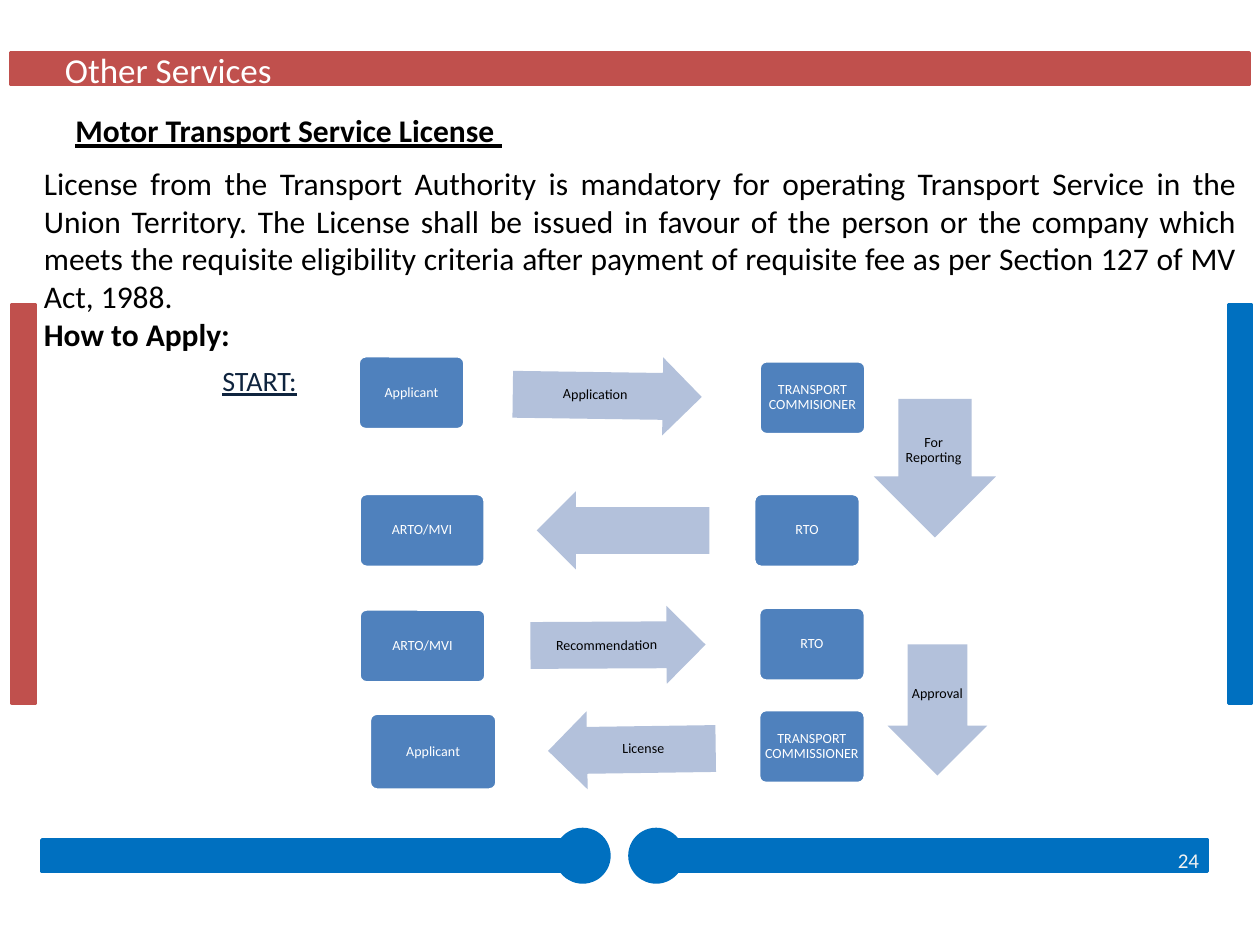
import pptx
import pptx.util
import pptx.dml.color
import pptx.enum.shapes
import pptx.enum.text

Pt = pptx.util.Pt
RGBColor = pptx.dml.color.RGBColor
SHAPE = pptx.enum.shapes.MSO_SHAPE
ALIGN = pptx.enum.text.PP_ALIGN
ANCHOR = pptx.enum.text.MSO_ANCHOR

BLUE = RGBColor(0x00, 0x70, 0xC0)
RED = RGBColor(0xC0, 0x50, 0x4D)
BOX_BLUE = RGBColor(0x4F, 0x81, 0xBD)
ARROW_BLUE = RGBColor(0xB3, 0xC1, 0xDB)
NAVY = RGBColor(0x0F, 0x24, 0x3E)
PALE = RGBColor(0xF2, 0xF2, 0xF2)
WHITE = RGBColor(0xFF, 0xFF, 0xFF)
BLACK = RGBColor(0x00, 0x00, 0x00)

presentation = pptx.Presentation()
presentation.slide_width = Pt(720)
presentation.slide_height = Pt(540)
slide = presentation.slides.add_slide(presentation.slide_layouts[6])


def add_shape(kind, frame, fill, line=None):
    shape = slide.shapes.add_shape(kind, *[Pt(value) for value in frame])
    shape.shadow.inherit = False
    shape.fill.solid()
    shape.fill.fore_color.rgb = fill
    if line is None:
        shape.line.fill.background()
    else:
        shape.line.color.rgb = line
        shape.line.width = Pt(2)
    return shape


def write_text(shape, lines, color, size, align, margin=None, wrap=True):
    """Write one paragraph for each (text, font values) pair."""
    text_frame = shape.text_frame
    text_frame.word_wrap = wrap
    if margin is not None:
        text_frame.vertical_anchor = ANCHOR.MIDDLE
        for side in ("left", "top", "right", "bottom"):
            setattr(text_frame, "margin_" + side, Pt(margin))
    for index, (text, font_values) in enumerate(lines):
        paragraph = text_frame.add_paragraph() if index else text_frame.paragraphs[0]
        paragraph.alignment = align
        if margin is not None:
            paragraph.line_spacing = 0.9
        run = paragraph.add_run()
        run.text = text
        run.font.color.rgb = color
        for name, value in {"name": "Calibri", "size": Pt(size), **font_values}.items():
            setattr(run.font, name, value)


# Frame of bars and circles
for kind, frame, color in [
    (SHAPE.RECTANGLE, (24, 480, 318, 18), BLUE),
    (SHAPE.OVAL, (318, 474, 30, 30), BLUE),
    (SHAPE.RECTANGLE, (702, 174, 13, 228), BLUE),
    (SHAPE.RECTANGLE, (6, 30, 708, 18), RED),
    (SHAPE.RECTANGLE, (7, 174, 13, 228), RED),
    (SHAPE.RECTANGLE, (372, 480, 318, 18), BLUE),
    (SHAPE.OVAL, (360, 474, 30, 30), BLUE),
]:
    add_shape(kind, frame, color, color)

# Offices and people in the application process
for text, frame in [
    ("Applicant", (204.7, 203.3, 61, 42.2)),
    ("TRANSPORT COMMISIONER", (433.8, 206.2, 61, 42.2)),
    ("RTO", (430.7, 282, 61, 42.2)),
    ("ARTO/MVI", (205.2, 282, 72, 42.2)),
    ("ARTO/MVI", (205.2, 348, 72.5, 42.2)),
    ("RTO", (433.5, 347, 61, 42.2)),
    ("TRANSPORT COMMISSIONER", (433.5, 405.5, 61, 42.2)),
    ("Applicant", (211, 407.5, 73, 44)),
]:
    box = add_shape(SHAPE.ROUNDED_RECTANGLE, frame, BOX_BLUE, WHITE)
    box.adjustments[0] = 0.1
    write_text(box, [(text, {})], WHITE, 8, ALIGN.CENTER, margin=2)

# Arrows between the steps, with upright labels
for frame, rotation, label, label_frame, label_rotation in [
    ((293, 203.8, 108, 44.6), 0.8, "Application", (293, 212.4, 94.3, 26.6), 0.8),
    ((494.6, 232.6, 79.2, 69.8), 90, "For Reporting", (512.6, 228.2, 41.8, 58.3), 0),
    ((306.7, 280.8, 98.6, 44.6), 180, None, None, 0),
    ((303.1, 346.3, 100.1, 44.6), 359.7, "Recommendation", (303.1, 355.7, 87.1, 26.6), 359.7),
    ((498.2, 377.3, 74.9, 56.9), 90, "Approval", (518.4, 367.9, 34.6, 57.6), 0),
    ((313.2, 406.1, 95.8, 44.6), 179.2, "License", (326.2, 414.7, 82.8, 26.6), 359.2),
]:
    arrow = add_shape(SHAPE.RIGHT_ARROW, frame, ARROW_BLUE)
    arrow.adjustments[0] = 0.6
    arrow.adjustments[1] = 0.5
    arrow.rotation = rotation
    if label:
        label_box = slide.shapes.add_textbox(*[Pt(value) for value in label_frame])
        label_box.rotation = label_rotation
        write_text(label_box, [(label, {})], BLACK, 8, ALIGN.CENTER, margin=0)

# Headings, body text and page number
body = (
    "License from the Transport Authority is mandatory for operating Transport Service "
    "in the Union Territory. The License shall be issued in favour of the person or the "
    "company which meets the requisite eligibility criteria after payment of requisite "
    "fee as per Section 127 of MV Act, 1988."
)
for frame, lines, color, size, align, wrap in [
    ((120, 204, 78, 26.6), [("START:", {"underline": True})], NAVY, 16, ALIGN.LEFT, True),
    ((36, 60, 265.7, 29), [("Motor Transport Service License ", {"bold": True, "underline": True})],
     BLACK, 18, ALIGN.JUSTIFY, False),
    ((30, 24, 672, 31.5), [("Other Services", {})], WHITE, 20, ALIGN.LEFT, True),
    ((18, 90, 696, 116.6), [(body, {}), ("How to Apply:", {"bold": True})],
     BLACK, 18, ALIGN.JUSTIFY, True),
    ((666, 481, 36, 28.8), [("24", {})], PALE, 12, ALIGN.LEFT, True),
]:
    text_box = slide.shapes.add_textbox(*[Pt(value) for value in frame])
    write_text(text_box, lines, color, size, align, wrap=wrap)

presentation.save("out.pptx")
